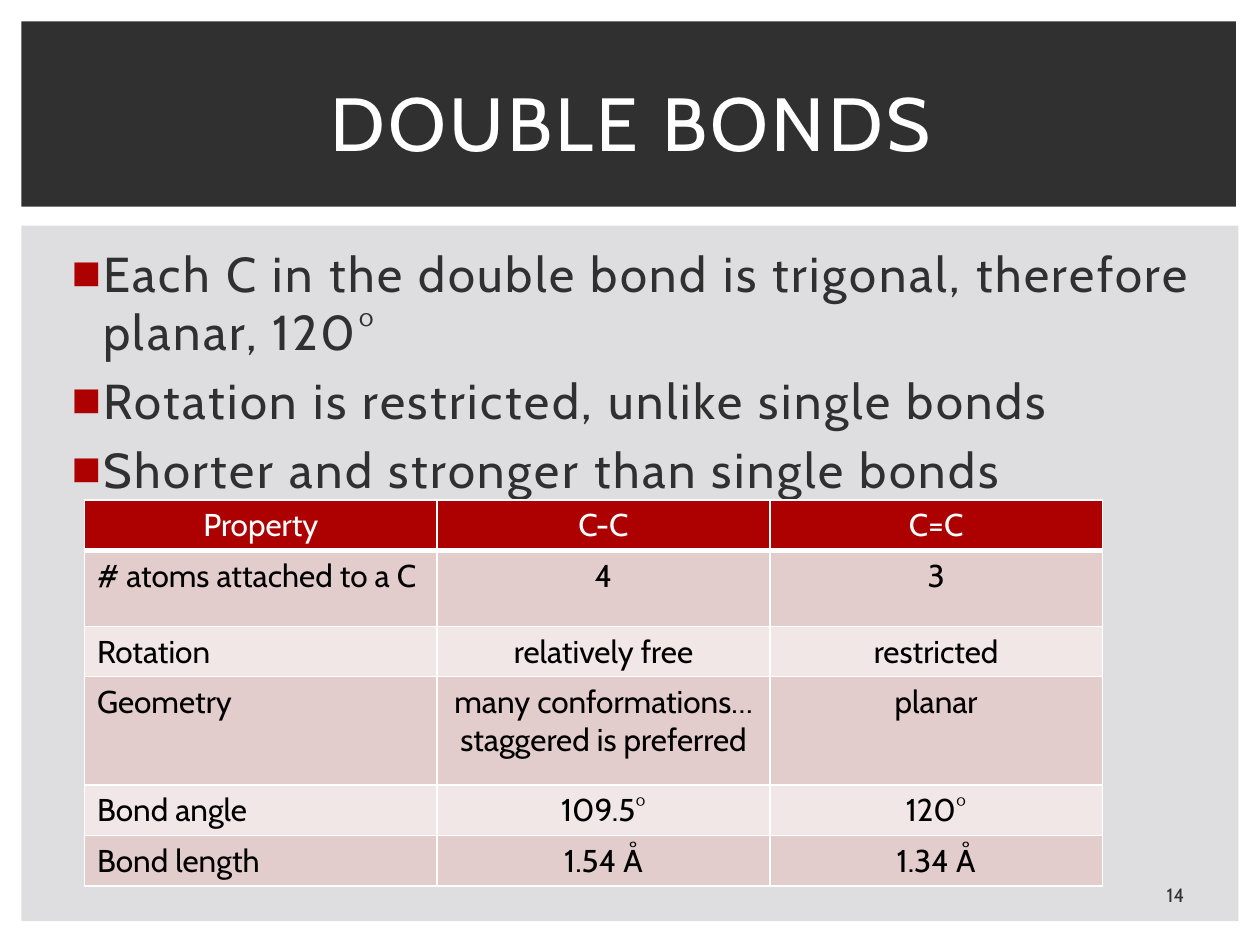
from typing import NamedTuple

from lxml.etree import SubElement
from pptx import Presentation
from pptx.dml.color import RGBColor
from pptx.enum.shapes import MSO_SHAPE
from pptx.enum.text import MSO_ANCHOR, PP_ALIGN
from pptx.oxml.ns import qn
from pptx.util import Inches, Pt

FONT = "Cabin"
DARK = "303030"
RED = "AD0101"
WHITE = "FFFFFF"
BANDS = ("F1E7E7", "E3CCCC")


class Panel(NamedTuple):
    left: float
    top: float
    width: float
    height: float
    color: str


class Row(NamedTuple):
    height: float
    cells: tuple[str, str, str]


PANELS = (
    Panel(0.17, 1.79, 9.66, 5.52, "DEDEE0"),
    Panel(0.17, 0.17, 9.64, 1.47, DARK),
)
BULLETS = (
    "Each C in the double bond is trigonal, therefore planar, 120°",
    "Rotation is restricted, unlike single bonds",
    "Shorter and stronger than single bonds",
)
COLUMNS = (2.8, 2.64, 2.64)
ROWS = (
    Row(0.34, ("Property", "C-C", "C=C")),
    Row(0.6, ("# atoms attached to a C", "4", "3")),
    Row(0.34, ("Rotation", "relatively free", "restricted")),
    Row(0.86, ("Geometry", "many conformations…\nstaggered is preferred", "planar")),
    Row(0.34, ("Bond angle", "109.5°", "120°")),
    Row(0.34, ("Bond length", "1.54 Å", "1.34 Å")),
)


def paint(target, color: str) -> None:
    target.solid()
    target.fore_color.rgb = RGBColor.from_string(color)


def place(sp, left: float, top: float, width: float, height: float) -> None:
    sp.left, sp.top = Inches(left), Inches(top)
    sp.width, sp.height = Inches(width), Inches(height)


def write(tf, text: str, *, size: float, color: str, align=PP_ALIGN.LEFT,
          anchor=MSO_ANCHOR.TOP, spacing: float = 0, before: float = 0) -> None:
    tf.word_wrap = True
    tf.vertical_anchor = anchor
    tf.text = text
    for p in tf.paragraphs:
        p.alignment = align
        p.space_before = Pt(before)
        for r in p.runs:
            r.font.name = FONT
            r.font.size = Pt(size)
            r.font.color.rgb = RGBColor.from_string(color)
            if spacing:
                r.font._element.set("spc", str(round(spacing * 100)))


def add_bullet(p, char: str, color: str) -> None:
    pPr = p._p.get_or_add_pPr()
    pPr.set("marL", str(Inches(0.3)))
    pPr.set("indent", str(Inches(-0.25)))
    SubElement(SubElement(pPr, qn("a:buClr")), qn("a:srgbClr"), val=color)
    SubElement(pPr, qn("a:buFont"), typeface="Arial")
    SubElement(pPr, qn("a:buChar"), char=char)


def add_borders(cell, bottom: float) -> None:
    tcPr = cell._tc.get_or_add_tcPr()
    for side, width in (("L", 1), ("R", 1), ("T", 1), ("B", bottom)):
        ln = SubElement(tcPr, qn(f"a:ln{side}"), w=str(Pt(width)))
        SubElement(SubElement(ln, qn("a:solidFill")), qn("a:srgbClr"), val=WHITE)


def add_panel(s, panel: Panel):
    sp = s.shapes.add_shape(MSO_SHAPE.RECTANGLE, *map(Inches, panel[:4]))
    sp.shadow.inherit = False
    paint(sp.fill, panel.color)
    sp.line.fill.background()
    return sp


def add_text_box(s, left: float, top: float, width: float, height: float):
    return s.shapes.add_textbox(*map(Inches, (left, top, width, height))).text_frame


def add_property_table(s) -> None:
    table = s.shapes.add_table(
        len(ROWS), len(COLUMNS), Inches(0.67), Inches(3.97),
        Inches(sum(COLUMNS)), Inches(sum(row.height for row in ROWS))).table
    for column, width in zip(table.columns, COLUMNS):
        column.width = Inches(width)
    for i, row in enumerate(ROWS):
        table.rows[i].height = Inches(row.height)
        header = i == 0
        for j, text in enumerate(row.cells):
            cell = table.cell(i, j)
            add_borders(cell, 3 if header else 1)
            paint(cell.fill, RED if header else BANDS[i % 2])
            write(cell.text_frame, text, size=18,
                  color=WHITE if header else "000000",
                  align=PP_ALIGN.CENTER if header or j else PP_ALIGN.LEFT)


def main() -> None:
    prs = Presentation()
    prs.slide_width, prs.slide_height = Inches(10), Inches(7.5)
    s = prs.slides.add_slide(prs.slide_layouts[5])
    paint(s.background.fill, WHITE)

    title = s.shapes.title
    for panel in PANELS:
        title._element.addprevious(add_panel(s, panel)._element)
    place(title, 0.42, 0.39, 9.17, 1.15)
    write(title.text_frame, "DOUBLE BONDS", size=43, color=WHITE,
          align=PP_ALIGN.CENTER, anchor=MSO_ANCHOR.MIDDLE, spacing=2)

    body = add_text_box(s, 0.42, 1.88, 9.19, 4.82)
    write(body, "\n".join(BULLETS), size=28, color=DARK, spacing=1.5, before=5.6)
    for p in body.paragraphs:
        add_bullet(p, "■", RED)

    number = add_text_box(s, 9.01, 6.95, 0.64, 0.3)
    write(number, "14", size=11, color=DARK, align=PP_ALIGN.CENTER,
          anchor=MSO_ANCHOR.MIDDLE)

    add_property_table(s)
    prs.save("out.pptx")


if __name__ == "__main__":
    main()
